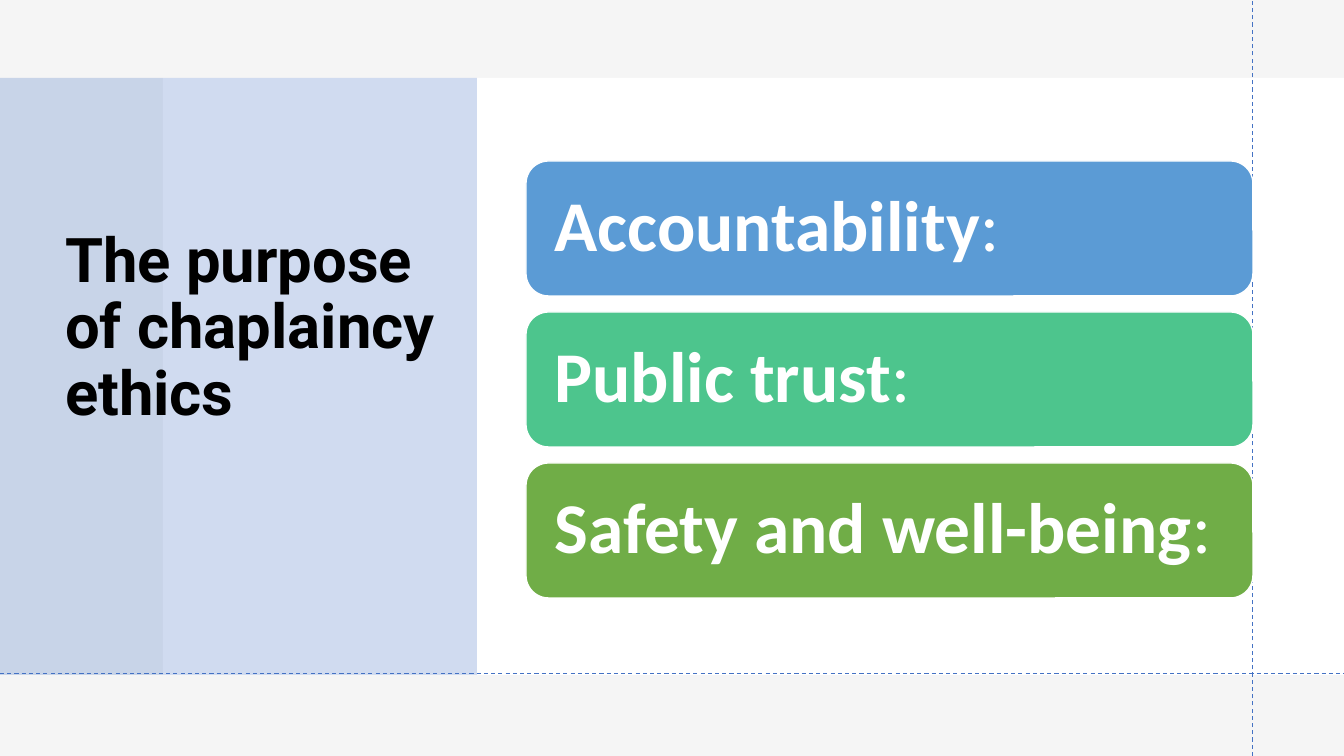
from dataclasses import dataclass

from lxml.etree import SubElement
from pptx import Presentation
from pptx.dml.color import RGBColor
from pptx.enum.dml import MSO_LINE
from pptx.enum.shapes import MSO_CONNECTOR, MSO_SHAPE
from pptx.enum.text import MSO_ANCHOR, MSO_AUTO_SIZE, PP_ALIGN
from pptx.oxml.ns import qn
from pptx.util import Pt

EMU_PER_PX = 914400 / 100.8
SLIDE_WIDTH, SLIDE_HEIGHT = 1344, 756


def px(length):
    return round(length * EMU_PER_PX)


@dataclass(frozen=True)
class Theme:
    backdrop: str = "F5F5F5"
    white: str = "FFFFFF"
    black: str = "000000"
    accent: str = "4472C4"
    blue: str = "5B9BD5"
    teal: str = "4DC58D"
    green: str = "70AD47"
    title_font: str = "Roboto"
    title_size: int = 44
    purpose_font: str = "Calibri"
    purpose_size: int = 51


class SlideBuilder:
    def __init__(self, slide, theme):
        self.slide = slide
        self.theme = theme

    def background(self, color):
        fill = self.slide.background.fill
        fill.solid()
        fill.fore_color.rgb = RGBColor.from_string(color)

    def box(self, left, top, width, height, color, preset=MSO_SHAPE.RECTANGLE, opacity=100):
        box = self.slide.shapes.add_shape(preset, px(left), px(top), px(width), px(height))
        box.shadow.inherit = False
        box.fill.solid()
        box.fill.fore_color.rgb = RGBColor.from_string(color)
        box.line.fill.background()
        if opacity < 100:
            tint = box._element.spPr.find(qn("a:solidFill"))[0]
            SubElement(tint, qn("a:alpha")).set("val", str(opacity * 1000))
        return box

    def guide(self, x1, y1, x2, y2):
        guide = self.slide.shapes.add_connector(
            MSO_CONNECTOR.STRAIGHT, px(x1), px(y1), px(x2), px(y2))
        guide.line.color.rgb = RGBColor.from_string(self.theme.accent)
        guide.line.width = Pt(0.75)
        guide.line.dash_style = MSO_LINE.DASH
        SubElement(guide._element.spPr, qn("a:effectLst"))

    def fill_text(self, frame, text, font_name, size, color):
        frame.text = text
        frame.word_wrap = True
        frame.auto_size = MSO_AUTO_SIZE.NONE
        frame.vertical_anchor = MSO_ANCHOR.MIDDLE
        paragraph = frame.paragraphs[0]
        paragraph.alignment = PP_ALIGN.LEFT
        paragraph.line_spacing = 0.9
        self.style(paragraph.runs[0], font_name, size, color, bold=True)
        return paragraph

    def style(self, run, font_name, size, color, bold):
        run.font.name = font_name
        run.font.size = Pt(size)
        run.font.bold = bold
        run.font.color.rgb = RGBColor.from_string(color)

    def title(self, text, left, top, width, height):
        title = self.slide.shapes.title
        title.left, title.top = px(left), px(top)
        title.width, title.height = px(width), px(height)
        self.fill_text(title.text_frame, text, self.theme.title_font,
                       self.theme.title_size, self.theme.black)
        # Bring the title in front of the panels
        title._element.getparent().append(title._element)

    def purpose(self, text, left, top, width, height, color):
        theme = self.theme
        bar = self.box(left, top, width, height, color, MSO_SHAPE.ROUNDED_RECTANGLE)
        bar.line.color.rgb = RGBColor.from_string(theme.white)
        bar.line.width = Pt(1)
        frame = bar.text_frame
        frame.margin_left = frame.margin_right = px(22)
        font = (theme.purpose_font, theme.purpose_size, theme.white)
        paragraph = self.fill_text(frame, text, *font)
        colon = paragraph.add_run()
        colon.text = ":"
        self.style(colon, *font, bold=False)


def main():
    theme = Theme()
    deck = Presentation()
    deck.slide_width, deck.slide_height = px(SLIDE_WIDTH), px(SLIDE_HEIGHT)
    title_only = deck.slide_layouts[5]
    builder = SlideBuilder(deck.slides.add_slide(title_only), theme)

    # Backdrop: white content area under a translucent title panel
    builder.background(theme.backdrop)
    builder.box(163, 78, SLIDE_WIDTH - 163, 597, theme.white)
    builder.box(0, 78, 477, 597, theme.accent, opacity=25)
    builder.title("The purpose of chaplaincy ethics", 55, 42, 398, 574)

    # Dashed guides
    builder.guide(1253, SLIDE_HEIGHT, 1253, 0)
    builder.guide(0, 674, SLIDE_WIDTH, 674)

    # Purposes, stacked at an equal pitch
    purposes = [
        ("Accountability", theme.blue),
        ("Public trust", theme.teal),
        ("Safety and well-being", theme.green),
    ]
    first_top, pitch = 161, 151
    for row, (purpose, color) in enumerate(purposes):
        builder.purpose(purpose, 526, first_top + row * pitch, 727, 135, color)

    deck.save("out.pptx")


if __name__ == "__main__":
    main()
